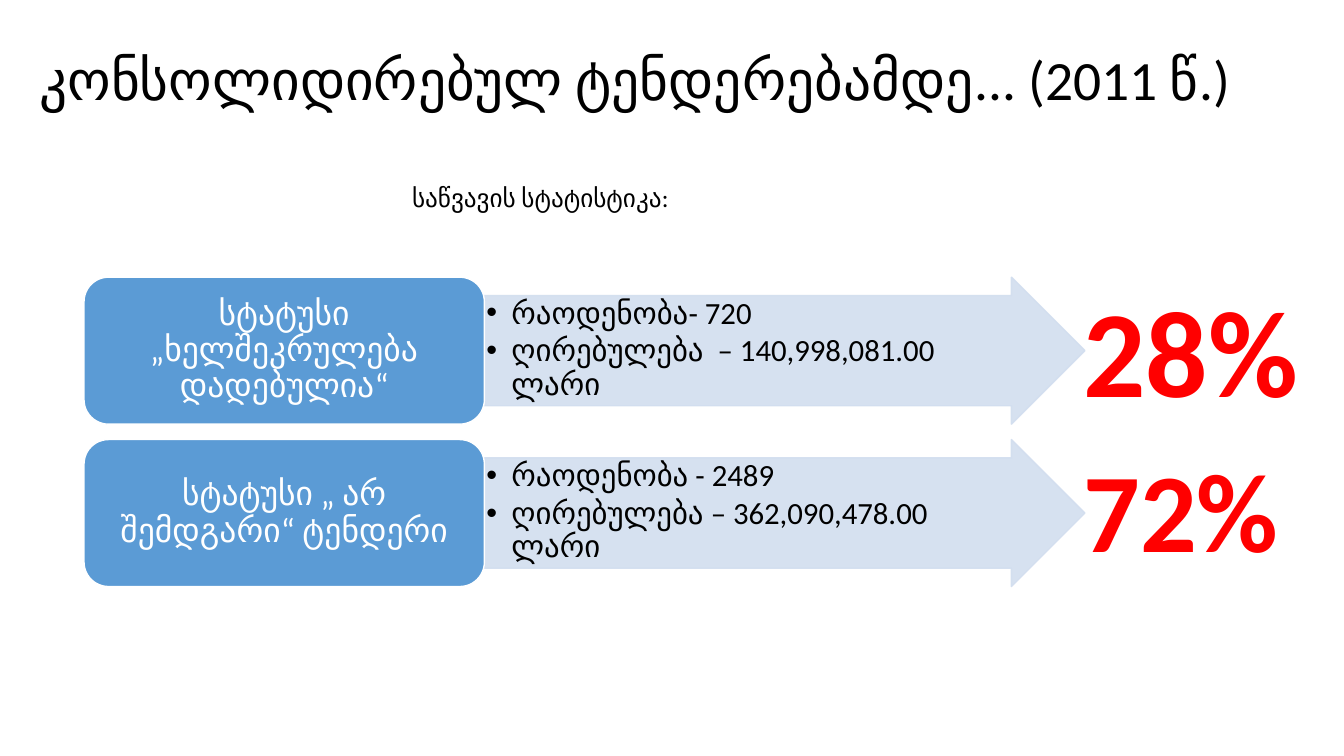
from dataclasses import dataclass

from lxml import etree
from pptx import Presentation
from pptx.dml.color import RGBColor
from pptx.enum.shapes import MSO_SHAPE
from pptx.enum.text import MSO_ANCHOR, MSO_AUTO_SIZE, PP_ALIGN
from pptx.oxml.ns import qn
from pptx.util import Pt

ARROW = MSO_SHAPE.RIGHT_ARROW
ROUNDED = MSO_SHAPE.ROUNDED_RECTANGLE
TOP = MSO_ANCHOR.TOP
MIDDLE = MSO_ANCHOR.MIDDLE
CENTER = PP_ALIGN.CENTER
GROW = MSO_AUTO_SIZE.SHAPE_TO_FIT_TEXT


@dataclass(frozen=True)
class Theme:
    font: str = "Calibri"
    text: str = "000000"
    inverse: str = "FFFFFF"
    status: str = "5B9BD5"
    arrow: str = "D2DEEF"
    accent: str = "FF0000"
    title_size: float = 39.6
    subtitle_size: float = 18
    status_size: float = 24
    detail_size: float = 22
    tight: float = 0.9
    arrow_opacity: int = 90


class StatisticsSlide:
    def __init__(self, slide, theme):
        self.shapes = slide.shapes
        self.theme = theme

    def style(self, paragraph, size, color, bold=False):
        font = paragraph.font
        font.name = self.theme.font
        font.size = Pt(size)
        font.bold = bold
        font.color.rgb = RGBColor.from_string(color)

    def text(self, words, box, size, color, bold=False):
        area = self.shapes.add_textbox(*map(Pt, box))
        frame = area.text_frame
        frame.word_wrap = True
        frame.auto_size = GROW
        paragraph = frame.paragraphs[0]
        paragraph.text = words
        self.style(paragraph, size, color, bold)
        return frame

    def title(self, words, box):
        frame = self.text(words, box, self.theme.title_size, self.theme.text)
        frame.auto_size = MSO_AUTO_SIZE.NONE
        frame.margin_top = Pt(8.6)
        frame.paragraphs[0].line_spacing = self.theme.tight

    def block(self, kind, box, fill, line):
        block = self.shapes.add_shape(kind, *map(Pt, box))
        block.shadow.inherit = False
        block.fill.solid()
        block.fill.fore_color.rgb = RGBColor.from_string(fill)
        block.line.color.rgb = RGBColor.from_string(line)
        block.line.width = Pt(1)
        block.text_frame.word_wrap = True
        return block

    def status(self, words, box):
        block = self.block(ROUNDED, box, self.theme.status, self.theme.inverse)
        block.text_frame.vertical_anchor = MIDDLE
        paragraph = block.text_frame.paragraphs[0]
        paragraph.text = words
        paragraph.alignment = CENTER
        paragraph.line_spacing = self.theme.tight
        self.style(paragraph, self.theme.status_size, self.theme.inverse)

    def details(self, items, box):
        arrow = self.block(ARROW, box, self.theme.arrow, self.theme.arrow)
        arrow.adjustments[0] = 0.75
        for color in arrow._element.spPr.iter(qn("a:srgbClr")):
            opacity = str(self.theme.arrow_opacity * 1000)
            etree.SubElement(color, qn("a:alpha"), val=opacity)
        frame = arrow.text_frame
        frame.vertical_anchor = TOP
        frame.margin_left = frame.margin_top = frame.margin_bottom = Pt(1.4)
        frame.margin_right = Pt(28)
        frame.text = "\n".join(items)
        for paragraph in frame.paragraphs:
            self.bullet(paragraph)
            paragraph.alignment = PP_ALIGN.LEFT
            paragraph.line_spacing = self.theme.tight
            paragraph.space_after = Pt(3.3)
            self.style(paragraph, self.theme.detail_size, self.theme.text)

    def bullet(self, paragraph):
        properties = paragraph._p.get_or_add_pPr()
        properties.set("marL", str(Pt(18)))
        properties.set("indent", str(-Pt(18)))
        etree.SubElement(properties, qn("a:buFont"), typeface="Arial")
        etree.SubElement(properties, qn("a:buChar"), char="•")


OUTCOMES = [
    (
        "სტატუსი „ხელშეკრულება დადებულია“",
        ["რაოდენობა- 720", "ღირებულება  – 140,998,081.00 ლარი"],
        ("28%", 88, 192.2, 114),
    ),
    (
        "სტატუსი „ არ შემდგარი“ ტენდერი",
        ["რაოდენობა - 2489", "ღირებულება – 362,090,478.00 ლარი"],
        ("72%", 80, 311, 104.4),
    ),
]


def main():
    presentation = Presentation()
    presentation.slide_width = Pt(960)
    presentation.slide_height = Pt(540)
    blank = presentation.slide_layouts[6]
    theme = Theme()
    page = StatisticsSlide(presentation.slides.add_slide(blank), theme)

    page.title("კონსოლიდირებულ ტენდერებამდე... (2011 წ.)", (21, 29, 932, 104))
    page.text("საწვავის სტატისტიკა:", (287.3, 126.7, 371.5, 29),
              theme.subtitle_size, theme.text)

    left, top, height, pitch = 60, 198, 105, 116
    status_width, arrow_width = 286, 429
    for row, (status, details, share) in enumerate(OUTCOMES):
        row_top = top + row * pitch
        arrow_left = left + status_width
        page.details(details, (arrow_left, row_top, arrow_width, height))
        page.status(status, (left, row_top, status_width, height))
        percent, size, share_top, share_height = share
        page.text(percent, (766.8, share_top, 187, share_height),
                  size, theme.accent, bold=True)

    presentation.save("out.pptx")


if __name__ == "__main__":
    main()
